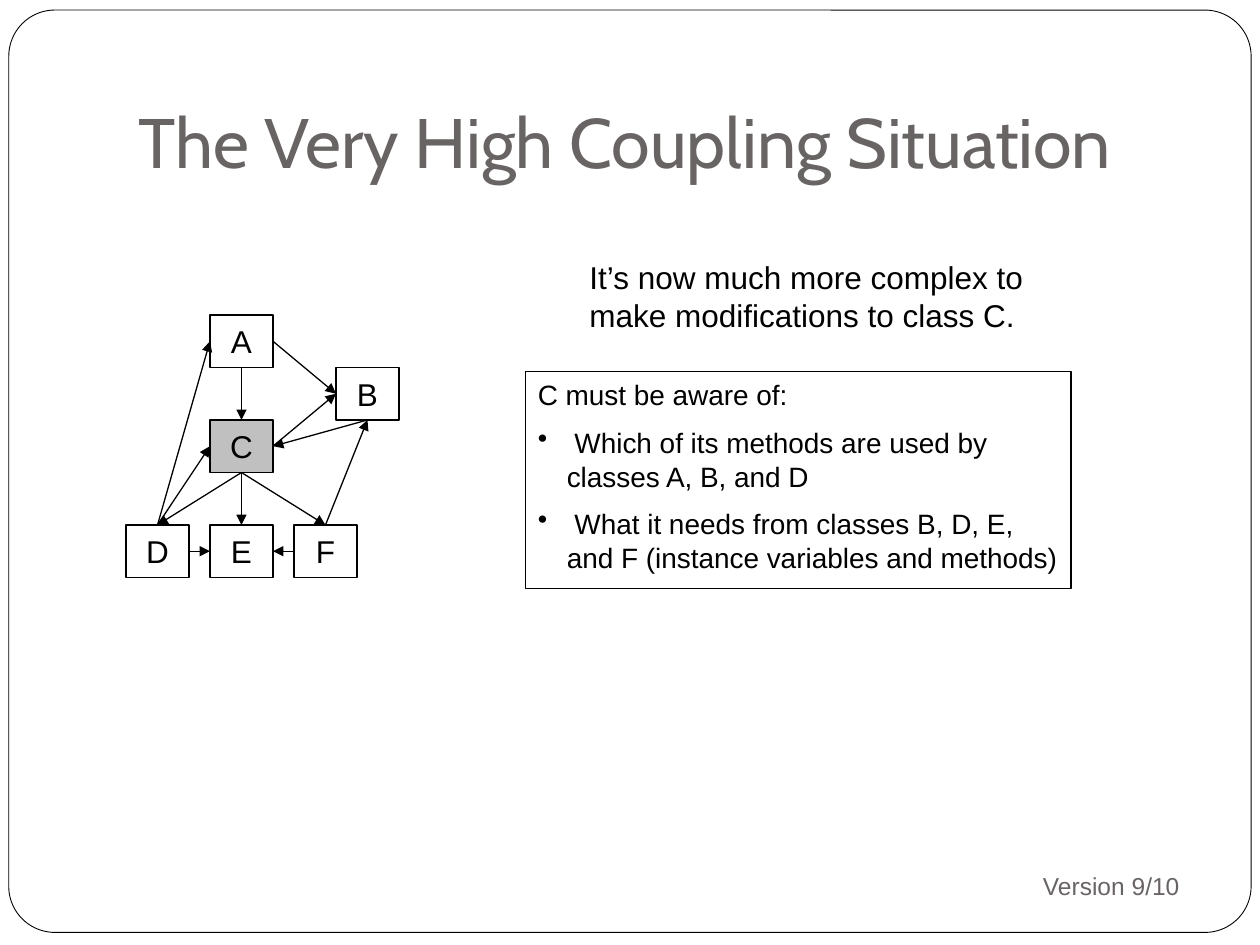
from dataclasses import dataclass

from lxml import etree
from pptx import Presentation
from pptx import util as u
from pptx.dml.color import RGBColor
from pptx.enum import shapes, text
from pptx.oxml.ns import qn


@dataclass(frozen=True)
class Theme:
    heading_font: str = "Cabin"
    body_font: str = "Arial"
    black: str = "000000"
    white: str = "FFFFFF"
    gray: str = "696464"
    highlight: str = "C0C0C0"
    title_size: int = 40
    body_size: int = 18
    list_size: int = 16
    footer_size: int = 14
    thin_line: float = 0.5
    line: float = 0.75


THEME = Theme()
TOP, LEFT, BOTTOM, RIGHT = range(4)  # connection sites of a rectangle


def write_text(frame, paragraphs, *, size=THEME.body_size, color=THEME.black,
               font=THEME.body_font, align=text.PP_ALIGN.LEFT,
               anchor=text.MSO_ANCHOR.TOP, wrap=True, gap=0, bullet_indent=None):
    """Fill the frame; with bullet_indent, all paragraphs but the first are bulleted."""
    frame.word_wrap = wrap
    frame.vertical_anchor = anchor
    for index, content in enumerate(paragraphs):
        paragraph = frame.add_paragraph() if index else frame.paragraphs[0]
        paragraph.alignment = align
        paragraph.space_before = u.Pt(gap if index else 0)
        run = paragraph.add_run()
        run.text = content
        run.font.name = font
        run.font.size = u.Pt(size)
        run.font.color.rgb = RGBColor.from_string(color)
        if index and bullet_indent:
            properties = paragraph._p.get_or_add_pPr()
            properties.set("marL", str(bullet_indent))
            properties.set("indent", str(-bullet_indent))
            etree.SubElement(properties, qn("a:buChar")).set("char", "•")


class SlideBuilder:
    def __init__(self, slide, theme):
        self.slide = slide
        self.theme = theme

    def box(self, left, top, width, height, *, fill=None, line=None,
            kind=shapes.MSO_SHAPE.RECTANGLE):
        shape = self.slide.shapes.add_shape(
            kind, *map(u.Inches, (left, top, width, height)))
        shape.shadow.inherit = False
        if fill:
            shape.fill.solid()
            shape.fill.fore_color.rgb = RGBColor.from_string(fill)
        else:
            shape.fill.background()
        shape.line.color.rgb = RGBColor.from_string(self.theme.black)
        shape.line.width = u.Pt(line or self.theme.line)
        return shape

    def label(self, left, top, width, height, content, **style):
        shape = self.slide.shapes.add_textbox(
            *map(u.Inches, (left, top, width, height)))
        write_text(shape.text_frame, [content], **style)
        return shape

    def arrow(self, source, source_site, target, target_site):
        connector = self.slide.shapes.add_connector(
            shapes.MSO_CONNECTOR.STRAIGHT, 0, 0, 0, 0)
        connector.begin_connect(source, source_site)
        connector.end_connect(target, target_site)
        connector.line.color.rgb = RGBColor.from_string(self.theme.black)
        connector.line.width = u.Pt(self.theme.line)
        etree.SubElement(connector.line._get_or_add_ln(),
                         qn("a:tailEnd")).set("type", "triangle")
        etree.SubElement(connector._element.spPr, qn("a:effectLst"))


def draw_class_diagram(builder):
    column_step, row_step = 1 / 3, 5 / 12
    grid = {"A": (2, 0), "C": (2, 2), "E": (2, 4),
            "B": (5, 1), "D": (0, 4), "F": (4, 4)}
    nodes = {}
    for name, (column, row) in grid.items():
        node = builder.box(1 + column * column_step, 2.5 + row * row_step,
                           0.5, row_step,
                           fill=THEME.highlight if name == "C" else None)
        write_text(node.text_frame, [name], align=text.PP_ALIGN.CENTER,
                   anchor=text.MSO_ANCHOR.MIDDLE, wrap=False)
        nodes[name] = node

    uses = [
        ("A", BOTTOM, "C", TOP), ("A", RIGHT, "B", LEFT),
        ("C", BOTTOM, "E", TOP), ("C", BOTTOM, "F", TOP),
        ("C", BOTTOM, "D", TOP), ("C", RIGHT, "B", LEFT),
        ("D", TOP, "C", LEFT), ("F", TOP, "B", BOTTOM),
        ("D", RIGHT, "E", LEFT), ("D", TOP, "A", LEFT),
        ("F", LEFT, "E", RIGHT), ("B", BOTTOM, "C", RIGHT),
    ]
    for source, source_site, target, target_site in uses:
        builder.arrow(nodes[source], source_site, nodes[target], target_site)


def main():
    presentation = Presentation()
    presentation.slide_width = u.Inches(10)
    presentation.slide_height = u.Inches(7.5)
    slide = presentation.slides.add_slide(presentation.slide_layouts[6])
    builder = SlideBuilder(slide, THEME)

    border = builder.box(0.07, 0.08, 9.86, 7.32, fill=THEME.white,
                         line=THEME.thin_line,
                         kind=shapes.MSO_SHAPE.ROUNDED_RECTANGLE)
    border.adjustments[0] = 0.05

    title = builder.label(1, 0.3, 8.5, 1.25, "The Very High Coupling Situation",
                          size=THEME.title_size, color=THEME.gray,
                          font=THEME.heading_font, anchor=text.MSO_ANCHOR.BOTTOM)
    title.text_frame.margin_bottom = u.Inches(0.1)
    builder.label(6.75, 6.77, 2.71, 0.52, "Version 9/10",
                  size=THEME.footer_size, color=THEME.gray,
                  align=text.PP_ALIGN.RIGHT, anchor=text.MSO_ANCHOR.MIDDLE)

    draw_class_diagram(builder)

    awareness = builder.box(4.17, 2.95, 4.33, 1.72)
    write_text(awareness.text_frame, [
        "C must be aware of:",
        " Which of its methods are used by classes A, B, and D",
        " What it needs from classes B, D, E, and F (instance variables and methods)",
    ], size=THEME.list_size, gap=THEME.list_size / 2, bullet_indent=u.Inches(0.23))
    builder.label(4.58, 2, 3.92, 0.7,
                  "It’s now much more complex to make modifications to class C.")

    presentation.save("out.pptx")


if __name__ == "__main__":
    main()
